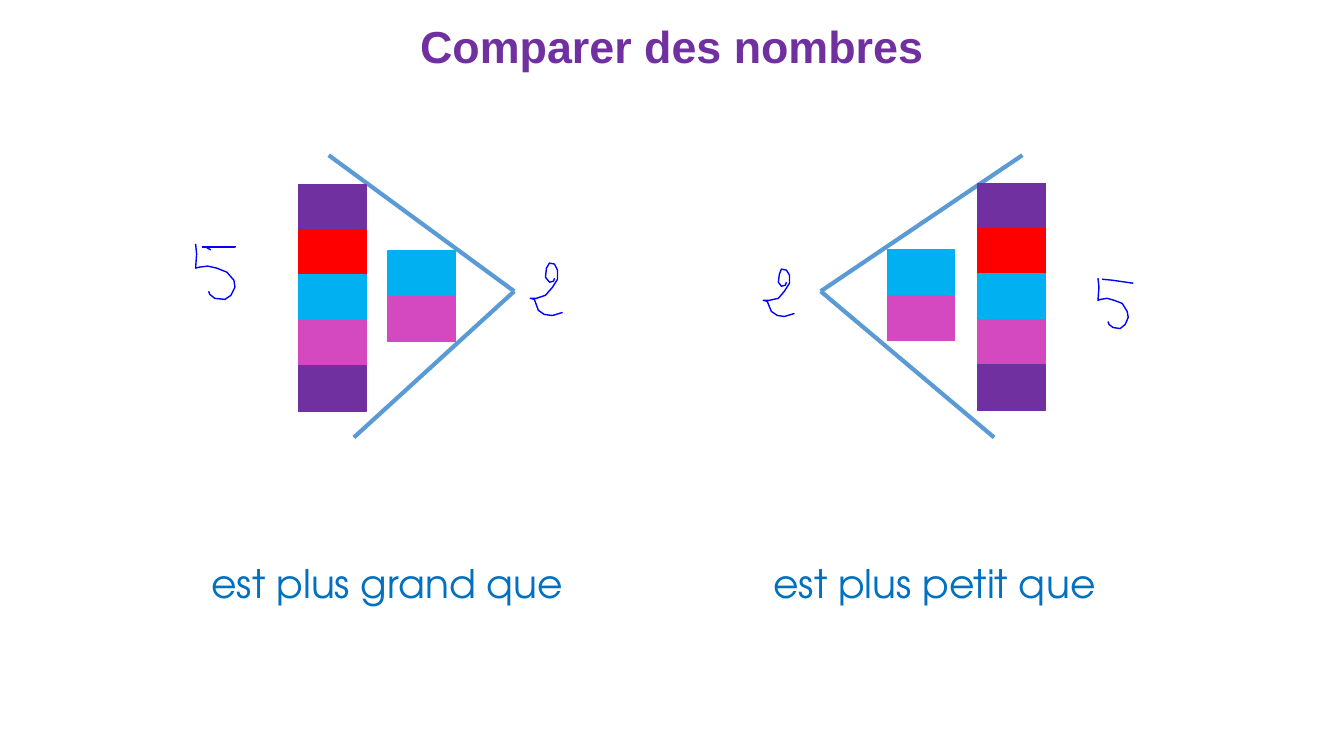
from lxml import etree
from pptx import Presentation
from pptx.dml.color import RGBColor
from pptx.enum import shapes, text
from pptx.oxml.ns import qn
from pptx.util import Inches, Pt

PURPLE = RGBColor(0x70, 0x30, 0xA0)
RED = RGBColor(0xFF, 0x00, 0x00)
CYAN = RGBColor(0x00, 0xB0, 0xF0)
PINK = RGBColor(0xD5, 0x49, 0xC0)
STEEL = RGBColor(0x5B, 0x9B, 0xD5)
BLUE = RGBColor(0x00, 0x70, 0xC0)
INK = RGBColor(0x00, 0x00, 0xFF)

FIVE = [PURPLE, RED, CYAN, PINK, PURPLE]
TWO = [CYAN, PINK]
BLOCK = 0.45

# Pen strokes, in hundredths of an inch from the digit's top left
HOOK = [(0, 0), (1, 10), (0, 24), (4, 23), (12, 22), (21, 24), (31, 28),
        (38, 36), (39, 43), (35, 51), (29, 55), (19, 54), (14, 50), (13, 47)]
SWAN = [(24, 15), (23, 18), (19, 19), (15, 14), (16, 5), (19, 0), (24, 1),
        (27, 7), (27, 16), (22, 24), (15, 32), (6, 35), (0, 35), (4, 36),
        (8, 47), (14, 51), (22, 52), (32, 49)]


def add_label(slide, words, box, size, face, color):
    label = slide.shapes.add_textbox(*map(Inches, box))
    frame = label.text_frame
    frame.word_wrap = True
    para = frame.paragraphs[0]
    para.text = words
    para.font.size = Pt(size)
    para.font.name = face
    para.font.color.rgb = color
    return label


def add_title(slide, words):
    title = add_label(slide, words, (0, 0.02, 13.33, 0.93), 32, "Arial", PURPLE)
    title.text_frame.vertical_anchor = text.MSO_ANCHOR.MIDDLE
    para = title.text_frame.paragraphs[0]
    para.alignment = text.PP_ALIGN.CENTER
    para.line_spacing = 0.9
    para.font.bold = True


def add_sign(slide, tip, ends):
    """Draw a comparison sign: one line from each end to the tip."""
    for end in ends:
        line = slide.shapes.add_connector(
            shapes.MSO_CONNECTOR.STRAIGHT, *map(Inches, end + tip))
        line.line.color.rgb = STEEL
        line.line.width = Pt(3)
        etree.SubElement(line._element.spPr, qn("a:effectLst"))


def add_tower(slide, left, top, colors):
    for row, color in enumerate(colors):
        block = slide.shapes.add_shape(
            shapes.MSO_SHAPE.RECTANGLE, Inches(left),
            Inches(top + row * BLOCK), Inches(0.67), Inches(BLOCK))
        block.shadow.inherit = False
        block.fill.solid()
        block.fill.fore_color.rgb = color
        block.line.color.rgb = color
        block.line.width = Pt(1)


def add_digit(slide, left, top, strokes, wide=1, tall=1):
    """Draw pen strokes from (left, top), stretched by wide and tall."""
    for stroke in strokes:
        points = [(left * 100 + x * wide, top * 100 + y * tall)
                  for x, y in stroke]
        pen = slide.shapes.build_freeform(*points[0], scale=Inches(0.01))
        pen.add_line_segments(points[1:], close=False)
        curve = pen.convert_to_shape()
        curve.shadow.inherit = False
        curve.fill.background()
        curve.line.color.rgb = INK
        curve.line.width = Pt(1)


def main():
    deck = Presentation()
    deck.slide_width = Inches(13.33)
    deck.slide_height = Inches(7.5)
    slide = deck.slides.add_slide(deck.slide_layouts[6])

    add_title(slide, "Comparer des nombres")
    add_sign(slide, (8.14, 2.89), [(10.14, 1.54), (9.86, 4.34)])
    add_sign(slide, (5.1, 2.89), [(3.26, 1.54), (3.51, 4.34)])
    for words, left, width in [("est plus grand que", 2, 3.93),
                               ("est plus petit que", 7.57, 3.54)]:
        add_label(slide, words, (left, 5.5, width, 0.57), 28,
                  "TeX Gyre Adventor", BLUE)

    add_tower(slide, 9.7, 1.82, FIVE)
    add_tower(slide, 8.8, 2.48, TWO)
    add_tower(slide, 2.96, 1.83, FIVE)
    add_tower(slide, 3.85, 2.49, TWO)

    add_digit(slide, 1.94, 2.42, [HOOK, [(6, 3), (39, 3), (39, 2)],
                                  [(15, 6), (10, 3)]])
    add_digit(slide, 5.26, 2.61, [SWAN])
    add_digit(slide, 7.57, 2.67, [SWAN], 0.97, 0.9)
    add_digit(slide, 10.89, 2.76, [HOOK, [(5, 1), (18, 2), (45, 5)]],
              0.77, 0.91)
    deck.save("out.pptx")


if __name__ == "__main__":
    main()
